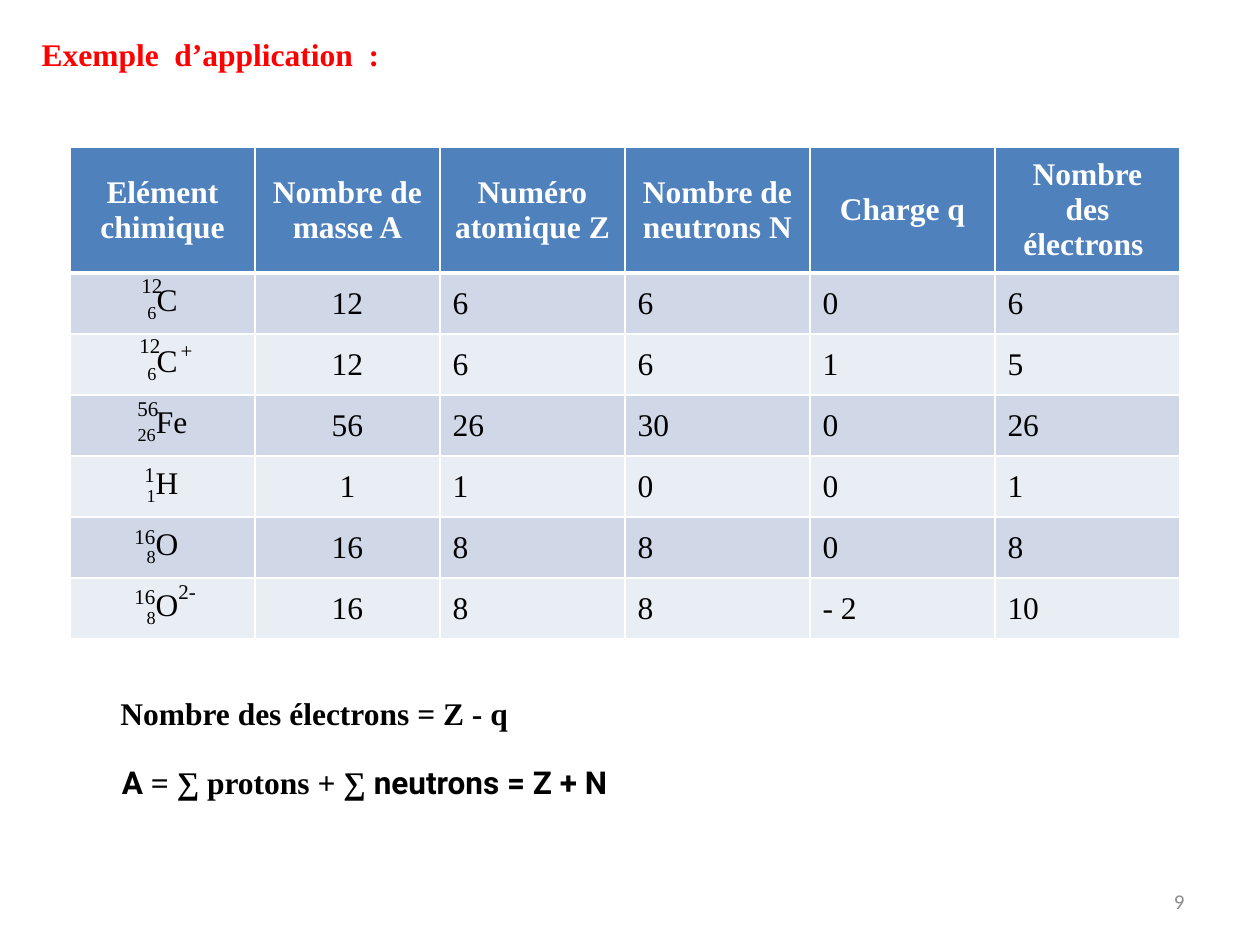
from lxml.etree import SubElement
from pptx import Presentation
from pptx.dml.color import RGBColor
from pptx.enum.text import MSO_ANCHOR as ANCHOR, MSO_AUTO_SIZE as FIT, PP_ALIGN as ALIGN
from pptx.oxml.ns import qn
from pptx.util import Emu, Pt

SERIF = "Times New Roman"
BLACK, WHITE, RED, GREY = "000000", "FFFFFF", "FF0000", "8C8C8C"
HEAD_FILL, BANDS = "4F81BD", ("D0D8E8", "E9EDF4")

HEADERS = ["Elément chimique", "Nombre de masse A", "Numéro atomique Z",
           "Nombre de neutrons N", "Charge q", "Nombre des électrons "]
# symbol, then A, Z, N, q, electrons
ELEMENTS = [
    ("C", "12", "6", "6", "0", "6"),
    ("C", "12", "6", "6", "1", "5"),
    ("Fe", "56", "26", "30", "0", "26"),
    ("H", "1", "1", "0", "0", "1"),
    ("O", "16", "8", "8", "0", "8"),
    ("O", "16", "8", "8", "- 2", "10"),
]
# row, text, offset from the left of the table and the top of the row
MARKS = [(0, "12", 59, -6), (1, "12", 57, -7), (1, " +", 93, -2),
         (2, "56", 55, -5), (3, "1", 62, 0), (4, "16", 52, 1),
         (5, "16", 52, 0), (5, "2-", 96, -5)]


def px(n):
    return Emu(round(n * 914400 / 126))


def rgb(color):
    return RGBColor.from_string(color)


def set_all(obj, values):
    for name, value in values.items():
        setattr(obj, name, value)


def add_run(p, text, size=18, font=SERIF, color=BLACK, bold=False):
    r = p.add_run()
    r.text = text
    set_all(r.font, {"size": Pt(size), "name": font, "bold": bold})
    r.font.color.rgb = rgb(color)
    return r


def add_text(slide, box, runs, frame=None, para=None):
    """Text box with one paragraph; runs are (text, format) pairs."""
    tf = slide.shapes.add_textbox(*map(px, box)).text_frame
    set_all(tf, {"word_wrap": True, **(frame or {})})
    p = tf.paragraphs[0]
    set_all(p, para or {})
    for text, style in runs:
        add_run(p, text, **style)
    return p


def add_title(slide, box):
    sp = slide.shapes.title
    set_all(sp, dict(zip(("left", "top", "width", "height"), map(px, box))))
    tf = sp.text_frame
    set_all(tf, {"word_wrap": False, "auto_size": FIT.SHAPE_TO_FIT_TEXT,
                 "vertical_anchor": ANCHOR.TOP})
    p = tf.paragraphs[0]
    p.alignment = ALIGN.LEFT
    add_run(p, "Exemple  d’application  :", color=RED, bold=True)


def style_cell(cell, fill, top, bottom):
    cell.vertical_anchor = ANCHOR.MIDDLE
    tc_pr = cell._tc.get_or_add_tcPr()
    for side, width in (("L", 1), ("R", 1), ("T", top), ("B", bottom)):
        ln = SubElement(tc_pr, qn(f"a:ln{side}"), w=str(Pt(width)))
        SubElement(SubElement(ln, qn("a:solidFill")), qn("a:srgbClr"), val=WHITE)
    cell.fill.solid()
    cell.fill.fore_color.rgb = rgb(fill)


def add_element_table(slide, box, head_h):
    x, y, w, h = box
    n_rows, n_cols = len(ELEMENTS) + 1, len(HEADERS)
    row_h = (h - head_h) // len(ELEMENTS)
    table = slide.shapes.add_table(n_rows, n_cols, *map(px, box)).table
    for col in table.columns:
        col.width = px(w // n_cols)
    for i, row in enumerate(table.rows):
        row.height = px(row_h if i else head_h)

    for i, values in enumerate([HEADERS, *ELEMENTS]):
        fill = BANDS[(i - 1) % 2] if i else HEAD_FILL
        for j, value in enumerate(values):
            cell = table.cell(i, j)
            style_cell(cell, fill, 3 if i == 1 else 1, 1 if i else 3)
            p = cell.text_frame.paragraphs[0]
            p.alignment = ALIGN.CENTER if i == 0 or j < 2 else ALIGN.LEFT
            if i and j == 0:  # atomic number as a subscript
                sub = add_run(p, values[2])
                sub.font._element.set("baseline", "-25000")
            add_run(p, value, color=BLACK if i else WHITE, bold=i == 0)

    # Mass numbers and charges around the symbols
    for row, text, dx, dy in MARKS:
        top = y + head_h + row * row_h + dy
        add_text(slide, (x + dx, top, 79, 38), [(text, {"size": 12})],
                 {"auto_size": FIT.SHAPE_TO_FIT_TEXT})


def add_formulas(slide, box):
    x, y, w, h = box
    bold, sans = {"bold": True}, {"bold": True, "font": "Roboto"}
    grow = {"auto_size": FIT.SHAPE_TO_FIT_TEXT}
    add_text(slide, (x + 30, y, 417, 63), [("Nombre des électrons = Z - q", bold)],
             {**grow, "word_wrap": False},
             {"alignment": ALIGN.JUSTIFY, "line_spacing": 1.5})
    p = add_text(slide, (x, y + 69, w, h - 69),
                 [("A", sans), (" = ∑ protons + ∑", bold), (" neutrons = Z + N", sans)],
                 grow, {"line_spacing": 1.5})
    p._p.get_or_add_pPr().set("indent", str(Emu(228600)))


def add_page_number(slide, box):
    add_text(slide, box, [("9", {"size": 12, "font": "Calibri", "color": GREY})],
             {"vertical_anchor": ANCHOR.MIDDLE}, {"alignment": ALIGN.RIGHT})


def main():
    prs = Presentation()
    prs.slide_width, prs.slide_height = px(1260), px(945)
    slide = prs.slides.add_slide(prs.slide_layouts[5])
    add_page_number(slide, (903, 876, 294, 50))
    add_title(slide, (29, 29, 374, 50))
    add_element_table(slide, (70, 147, 1110, 491), 125)
    add_formulas(slide, (78, 669, 601, 135))
    prs.save("out.pptx")


if __name__ == "__main__":
    main()
